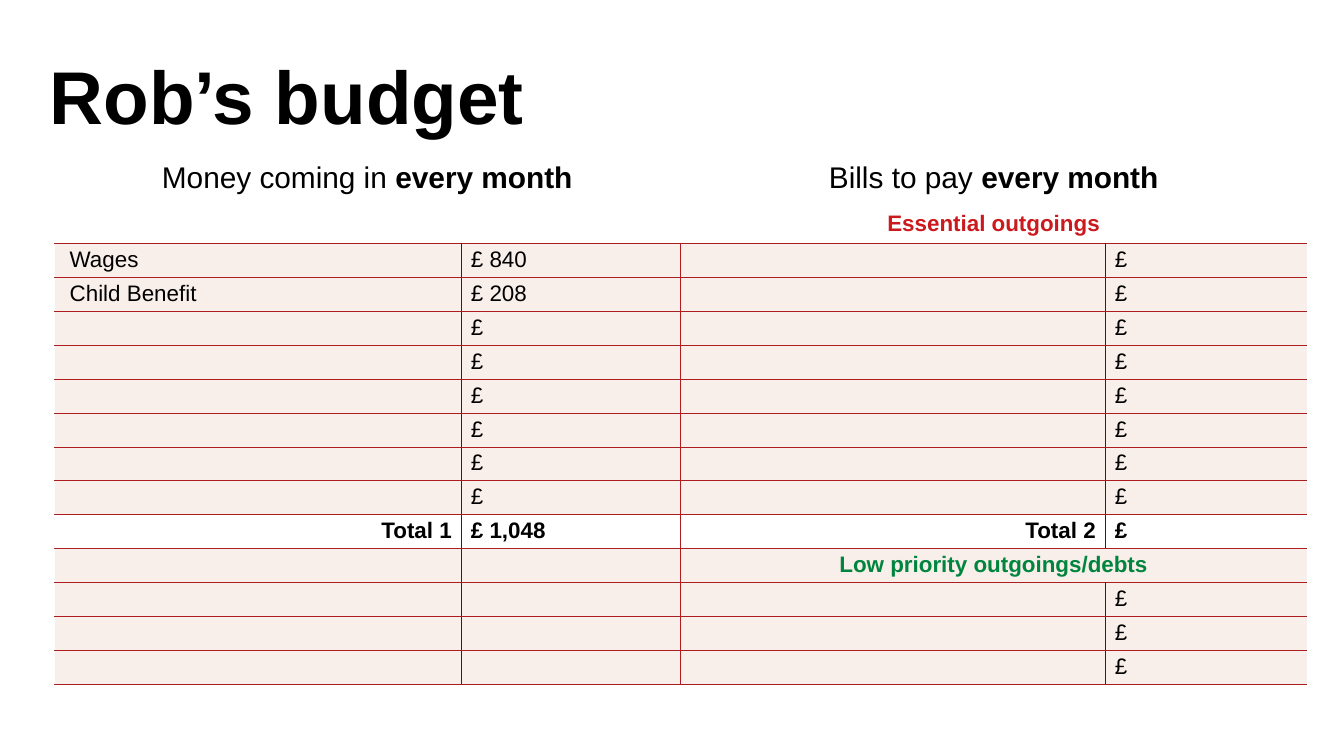
from lxml import etree
from pptx import Presentation
from pptx.dml.color import RGBColor
from pptx.enum.text import MSO_ANCHOR, MSO_AUTO_SIZE, PP_ALIGN
from pptx.oxml.ns import qn
from pptx.util import Cm, Pt

LEFT, CENTER, RIGHT = PP_ALIGN.LEFT, PP_ALIGN.CENTER, PP_ALIGN.RIGHT
TOP = MSO_ANCHOR.TOP
NO_AUTOFIT = MSO_AUTO_SIZE.NONE

BLACK = RGBColor(0x00, 0x00, 0x00)
WHITE = RGBColor(0xFF, 0xFF, 0xFF)
RULE_RED = RGBColor(0xAB, 0x1D, 0x1F)
DIVIDER_RED = RGBColor(0x80, 0x00, 0x00)
ESSENTIAL_RED = RGBColor(0xCC, 0x19, 0x1D)
PRIORITY_GREEN = RGBColor(0x00, 0x85, 0x3F)
PINK = RGBColor(0xF9, 0xEF, 0xEA)

COLUMN_WIDTHS = (7.7, 4.14, 8.03, 3.81)
HEADING_HEIGHTS = (0.96, 0.69)
ROW_HEIGHT = 0.64
HEADING_ROW, ESSENTIAL_ROW, TOTAL_ROW, PRIORITY_ROW = 0, 1, 10, 11
LAST_ROW = 14
MERGES = ((HEADING_ROW, 0), (HEADING_ROW, 2), (ESSENTIAL_ROW, 2), (PRIORITY_ROW, 2))
HAIRLINE, THIN = 0.25, 0.75


class BudgetSlide:
    font = "Arial"
    body_size = 12
    heading_size = 16
    title_size = 40

    def __init__(self, presentation):
        self.slide = presentation.slides.add_slide(presentation.slide_layouts[5])

    def add_text(self, paragraph, runs, size, color=BLACK, align=LEFT, spacing=1.15):
        paragraph.alignment = align
        paragraph.line_spacing = spacing
        for words, bold in runs:
            run = paragraph.add_run()
            run.text = words
            run.font.name = self.font
            run.font.size = Pt(size)
            run.font.bold = bold
            run.font.color.rgb = color

    def title(self, words, left, top, width, height):
        title = self.slide.shapes.title
        title.left, title.top = Cm(left), Cm(top)
        title.width, title.height = Cm(width), Cm(height)
        frame = title.text_frame
        frame.word_wrap = True
        frame.auto_size = NO_AUTOFIT
        frame.vertical_anchor = TOP
        self.add_text(frame.paragraphs[0], [(words, True)], self.title_size, spacing=Pt(54))

    def table(self, left, top, widths, heights, merges):
        frame = self.slide.shapes.add_table(
            len(heights), len(widths), Cm(left), Cm(top), Cm(sum(widths)), Cm(sum(heights)))
        table = frame.table
        table.first_row = False
        table.horz_banding = False
        for column, width in zip(table.columns, widths):
            column.width = Cm(width)
        for row, height in zip(table.rows, heights):
            row.height = Cm(height)
        for row, column in merges:
            table.cell(row, column).merge(table.cell(row, column + 1))
        return table

    def border(self, cell, side, color, width):
        line = etree.SubElement(cell._tc.get_or_add_tcPr(), qn(f"a:ln{side}"), w=str(Pt(width)))
        fill = etree.SubElement(line, qn("a:solidFill"))
        etree.SubElement(fill, qn("a:srgbClr"), val=str(color))

    def cell(self, cell, content, fill, borders):
        for side, (color, width) in zip("LRTB", borders):
            self.border(cell, side, color, width)
        if fill is None:
            cell.fill.background()
        else:
            cell.fill.solid()
            cell.fill.fore_color.rgb = fill
        cell.margin_left = cell.margin_right = Cm(0.18)
        cell.margin_top = cell.margin_bottom = 0
        cell.vertical_anchor = TOP
        paragraph = cell.text_frame.paragraphs[0]
        if content:
            self.add_text(paragraph, **content)
        else:
            etree.SubElement(paragraph._p, qn("a:endParaRPr"), sz=str(self.body_size * 100))


def budget_contents():
    body = BudgetSlide.body_size

    def plain(words):
        return dict(runs=[(words, False)], size=body)

    def strong(words, align=LEFT, color=BLACK):
        return dict(runs=[(words, True)], size=body, align=align, color=color)

    def heading(words):
        return dict(runs=[(words, False), ("every month", True)],
                    size=BudgetSlide.heading_size, align=CENTER)

    contents = {(row, 3): plain("£") for row in range(2, LAST_ROW + 1) if row != PRIORITY_ROW}
    contents.update({(row, 1): plain("£") for row in range(2, TOTAL_ROW)})
    contents.update({
        (HEADING_ROW, 0): heading("Money coming in "),
        (HEADING_ROW, 2): heading("Bills to pay "),
        (ESSENTIAL_ROW, 2): strong("Essential outgoings", CENTER, ESSENTIAL_RED),
        (2, 0): plain(" Wages"),
        (2, 1): plain("£ 840"),
        (3, 0): plain(" Child Benefit"),
        (3, 1): plain("£ 208"),
        (TOTAL_ROW, 0): strong("Total 1", RIGHT),
        (TOTAL_ROW, 1): strong("£ 1,048"),
        (TOTAL_ROW, 2): strong("Total 2", RIGHT),
        (TOTAL_ROW, 3): strong("£"),
        (PRIORITY_ROW, 2): strong("Low priority outgoings/debts", CENTER, PRIORITY_GREEN),
    })
    return contents


def row_fill(row):
    if row == HEADING_ROW:
        return None
    return WHITE if row in (ESSENTIAL_ROW, TOTAL_ROW) else PINK


def horizontal_rule(index):
    if index <= ESSENTIAL_ROW:
        return WHITE, THIN if index else HAIRLINE
    return RULE_RED, THIN if index == ESSENTIAL_ROW + 1 else HAIRLINE


def vertical_rule(row, index):
    if index in (0, 4) or row <= ESSENTIAL_ROW or (row, index - 1) in MERGES:
        return WHITE, HAIRLINE
    return (RULE_RED, THIN) if index == 2 else (DIVIDER_RED, HAIRLINE)


def main():
    presentation = Presentation()
    presentation.slide_width = Cm(25.4)
    presentation.slide_height = Cm(14.28)
    budget = BudgetSlide(presentation)
    budget.title("Rob’s budget", 0.69, 0.61, 18.21, 2.06)

    heights = HEADING_HEIGHTS + (ROW_HEIGHT,) * (LAST_ROW - ESSENTIAL_ROW)
    table = budget.table(1.02, 2.95, COLUMN_WIDTHS, heights, MERGES)
    contents = budget_contents()
    for row in range(len(heights)):
        for column in range(len(COLUMN_WIDTHS)):
            borders = (vertical_rule(row, column), vertical_rule(row, column + 1),
                       horizontal_rule(row), horizontal_rule(row + 1))
            budget.cell(table.cell(row, column), contents.get((row, column)),
                        row_fill(row), borders)

    presentation.save("out.pptx")


if __name__ == "__main__":
    main()
